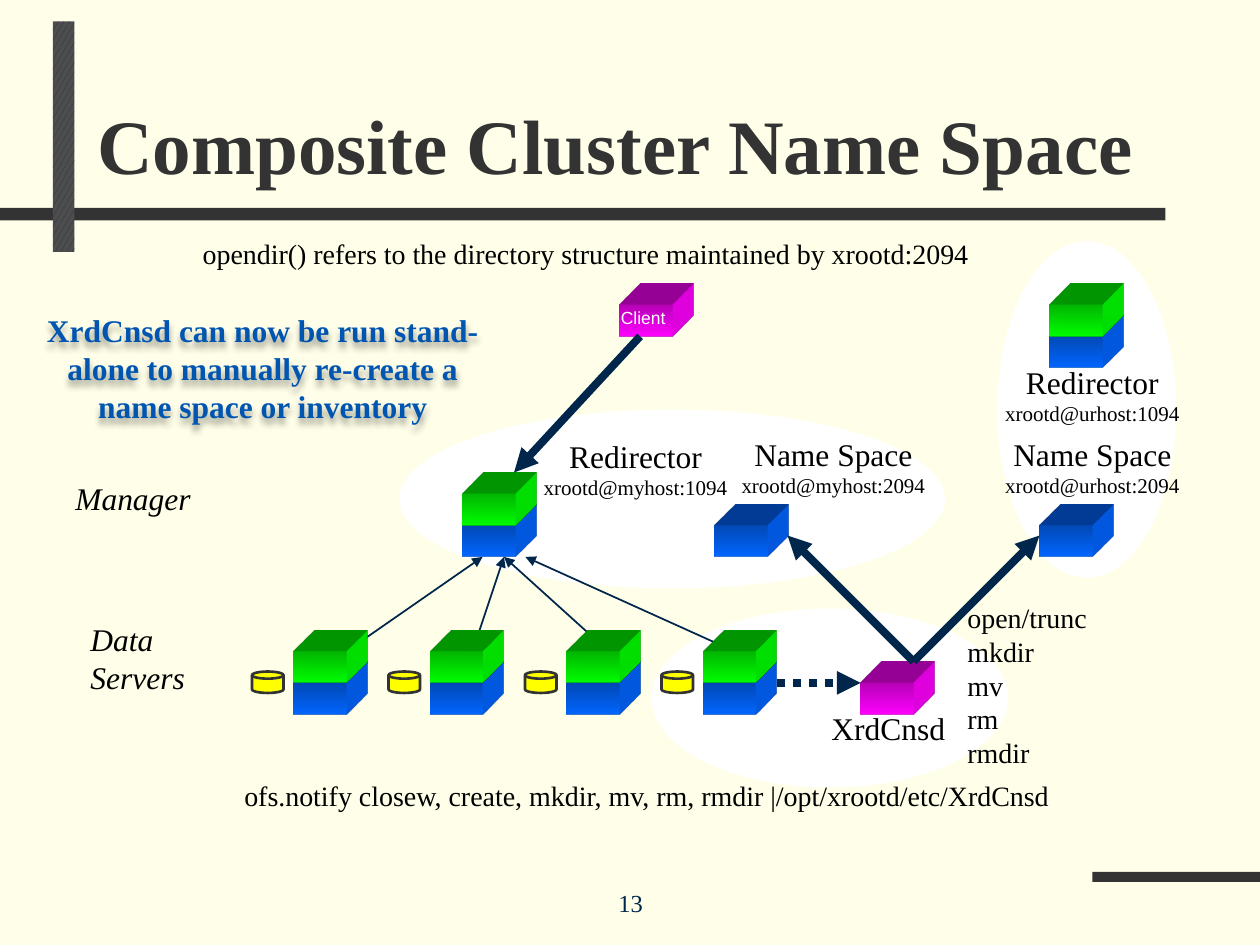
from lxml.etree import SubElement
from pptx import Presentation
from pptx.dml.color import RGBColor
from pptx.enum.dml import MSO_LINE, MSO_PATTERN
from pptx.enum.shapes import MSO_CONNECTOR as CONN, MSO_SHAPE as SHAPE
from pptx.enum.text import MSO_ANCHOR as ANCHOR, PP_ALIGN as ALIGN
from pptx.oxml.ns import qn
from pptx.util import Inches, Pt

THEME = {
    "bg": "FFFFE9", "bar": "333333", "confetti": ("262D4C", "4D4D4D"),
    "oval": "FFFFFF", "ink": "000000", "arrow": "00264C", "note": "0055B0",
    "disk": "FFFF00", "client": "FFFFFF", "shadow": "000000",
    "serif": "Times New Roman", "sans": "Arial",
    "title": 44, "label": 18, "body": 16, "page": 14, "host": 12, "small": 10,
}
# Cube colours: gradient start and end; the sides use the end colour
CUBES = {
    "blue": ("0049B6", "0066FF"),
    "green": ("00B600", "00FF00"),
    "pink": ("B600B6", "FF00FF"),
}
CUBE_W, CUBE_H, CUBE_DEPTH = 0.42, 0.25, 0.47

TITLE = "Composite Cluster Name Space"
BARS = [(0, 1.65, 9.25, 0.1), (8.67, 6.92, 1.33, 0.08)]
CONFETTI_BAR = (0.42, 0.17, 0.17, 1.83)
OVALS = [((7.29, 2.54, 2.67, 1.42), 90), ((5.17, 4.83, 2.83, 1.42), 0),
         ((3.17, 3.25, 4.33, 1.42), 0)]

SERVERS = [2.33 + 13 / 12 * i for i in range(4)]
SERVER_TOP = 5.17
STACKS = [(3.67, 3.92), (8.33, 2.42)] + [(x, SERVER_TOP) for x in SERVERS]
SINGLES = [(5.67, 4.17, "blue"), (8.25, 4.17, "blue"),
           (6.83, 5.42, "pink"), (4.92, 2.42, "pink")]

# Arrows: start, end
THIN_ARROWS = [((4.83, 5.17), (4, 4.42)), ((3.75, 5.17), (4, 4.42)),
               ((5.83, 5.17), (4.17, 4.42)), ((2.75, 5.17), (3.83, 4.42))]
THICK_ARROWS = [((7.25, 5.25), (6.25, 4.25)), ((7.25, 5.25), (8.25, 4.25)),
                ((5.08, 2.67), (4.08, 3.75))]
DOTTED_ARROW = ((6.17, 5.42), (6.83, 5.42))

# Host labels: box, name, address
HOSTS = [
    ((4.18, 3.42, 1.73, 0.6), "Redirector", "xrootd@myhost:1094"),
    ((5.75, 3.4, 1.73, 0.6), "Name Space", "xrootd@myhost:2094"),
    ((7.84, 3.4, 1.66, 0.61), "Name Space", "xrootd@urhost:2094"),
    ((7.87, 2.83, 1.6, 0.61), "Redirector", "xrootd@urhost:1094"),
]
# Other texts: box, lines, format
TEXTS = [
    ((3.42, 7.08, 3.17, 0.25), ["13"],
     {"size": "page", "color": "arrow", "align": ALIGN.CENTER, "anchor": ANCHOR.BOTTOM}),
    ((0.62, 4.87, 0.96, 1.01), ["Data", "Servers"], {"italic": True}),
    ((0.5, 3.75, 1.13, 0.4), ["Manager"], {"italic": True}),
    ((6.5, 5.58, 1.11, 0.4), ["XrdCnsd"], {}),
    ((1.84, 6.13, 6.69, 0.37),
     ["ofs.notify closew, create, mkdir, mv, rm, rmdir |/opt/xrootd/etc/XrdCnsd"],
     {"size": "body"}),
    ((7.58, 4.72, 1.16, 1.45), ["open/trunc", "mkdir", "mv", "rm", "rmdir"],
     {"size": "body"}),
    ((1.51, 1.83, 6.38, 0.37),
     ["opendir() refers to the directory structure maintained by xrootd:2094"],
     {"size": "body"}),
    ((4.83, 2.39, 0.56, 0.27), ["Client"],
     {"size": "small", "color": "client", "face": "sans"}),
]
NOTE_BOX = (0.25, 2.42, 3.67, 1.01)
NOTE = "XrdCnsd can now be run stand-alone to manually re-create a name space or inventory"


def rgb(value):
    return RGBColor.from_string(THEME.get(value, value))


def inches(values):
    return [Inches(v) for v in values]


def style(font, size="label", color="ink", face="serif", **flags):
    values = {"size": Pt(THEME[size]), "name": THEME[face], **flags}
    for name, value in values.items():
        setattr(font, name, value)
    font.color.rgb = rgb(color)


def add_shape(kind, box, fill=None):
    s = slide.shapes.add_shape(kind, *inches(box))
    s.shadow.inherit = False
    s.line.fill.background()
    if fill:
        s.fill.solid()
        s.fill.fore_color.rgb = rgb(fill)
    return s


def add_cube(x, y, name):
    s = add_shape(SHAPE.RECTANGLE, (x, y, CUBE_W, CUBE_H))
    s.fill.gradient()
    s.fill.gradient_angle = 270
    for stop, color, pos in zip(s.fill.gradient_stops, CUBES[name], (0, 1)):
        stop.color.rgb = rgb(color)
        stop.position = pos
    # Extrude towards the top right
    scene = SubElement(s._element.spPr, qn("a:scene3d"))
    SubElement(scene, qn("a:camera"), prst="legacyObliqueTopRight")
    SubElement(scene, qn("a:lightRig"), rig="legacyFlat3", dir="b")
    solid = SubElement(s._element.spPr, qn("a:sp3d"), prstMaterial="legacyMatte",
                       extrusionH=str(Inches(CUBE_DEPTH)))
    side = SubElement(solid, qn("a:extrusionClr"))
    SubElement(side, qn("a:srgbClr"), val=CUBES[name][1])


def add_arrow(start, end, width, dash=None):
    c = slide.shapes.add_connector(CONN.STRAIGHT, *inches(start + end))
    c.line.width = Pt(width)
    c.line.color.rgb = rgb("arrow")
    if dash:
        c.line.dash_style = dash
    SubElement(c.line._get_or_add_ln(), qn("a:tailEnd"), type="triangle")
    SubElement(c._element.spPr, qn("a:effectLst"))


def add_text(box, lines, wrap=False, align=ALIGN.LEFT, anchor=ANCHOR.TOP, formats=None, **fmt):
    s = slide.shapes.add_textbox(*inches(box))
    tf = s.text_frame
    tf.word_wrap, tf.vertical_anchor = wrap, anchor
    for i, line in enumerate(lines):
        p = tf.paragraphs[0] if i == 0 else tf.add_paragraph()
        p.alignment = align
        r = p.add_run()
        r.text = line
        style(r.font, **(formats[i] if formats else fmt))
    return s


prs = Presentation()
prs.slide_width, prs.slide_height = Inches(10), Inches(7.5)
slide = prs.slides.add_slide(prs.slide_layouts[5])
slide.background.fill.solid()
slide.background.fill.fore_color.rgb = rgb("bg")

# Frame bars and ovals
for box in BARS:
    add_shape(SHAPE.RECTANGLE, box, "bar")
s = add_shape(SHAPE.RECTANGLE, CONFETTI_BAR)
s.fill.patterned()
s.fill.pattern = MSO_PATTERN.LARGE_CONFETTI
s.fill.fore_color.rgb, s.fill.back_color.rgb = map(rgb, THEME["confetti"])
for box, angle in OVALS:
    add_shape(SHAPE.OVAL, box, "oval").rotation = angle

# Title
title = slide.shapes.title
title.left, title.top, title.width, title.height = inches((0.67, 0.31, 8.92, 1.25))
tf = title.text_frame
tf.text, tf.vertical_anchor = TITLE, ANCHOR.BOTTOM
tf.paragraphs[0].alignment = ALIGN.LEFT
style(tf.paragraphs[0].runs[0].font, "title", "bar", bold=True)

# Machines, disks and arrows
for start, end in THIN_ARROWS:
    add_arrow(start, end, 1)
for x, y in STACKS:
    add_cube(x, y + CUBE_H, "blue")
    add_cube(x, y, "green")
for x in SERVERS:
    disk = (x - 0.33, SERVER_TOP + 0.16, 0.25, 0.17)
    s = add_shape(SHAPE.FLOWCHART_MAGNETIC_DISK, disk, "disk")
    s.line.color.rgb = rgb("bar")
    s.line.width = Pt(1.5)
for cube in SINGLES:
    add_cube(*cube)
for start, end in THICK_ARROWS:
    add_arrow(start, end, 4.5)
add_arrow(*DOTTED_ARROW, 4.5, MSO_LINE.ROUND_DOT)

# Labels
for box, name, address in HOSTS:
    add_text(box, [name, address], align=ALIGN.CENTER,
             formats=[{"size": "label"}, {"size": "host"}])
for box, lines, fmt in TEXTS:
    add_text(box, lines, **fmt)

# Note with a soft shadow
s = add_text(NOTE_BOX, [NOTE], wrap=True, align=ALIGN.CENTER, color="note", bold=True)
effects = SubElement(s._element.spPr, qn("a:effectLst"))
shadow = SubElement(effects, qn("a:outerShdw"), blurRad="50800", dist="38100", dir="5400000")
color = SubElement(shadow, qn("a:srgbClr"), val=THEME["shadow"])
SubElement(color, qn("a:alpha"), val="40000")

prs.save("out.pptx")
